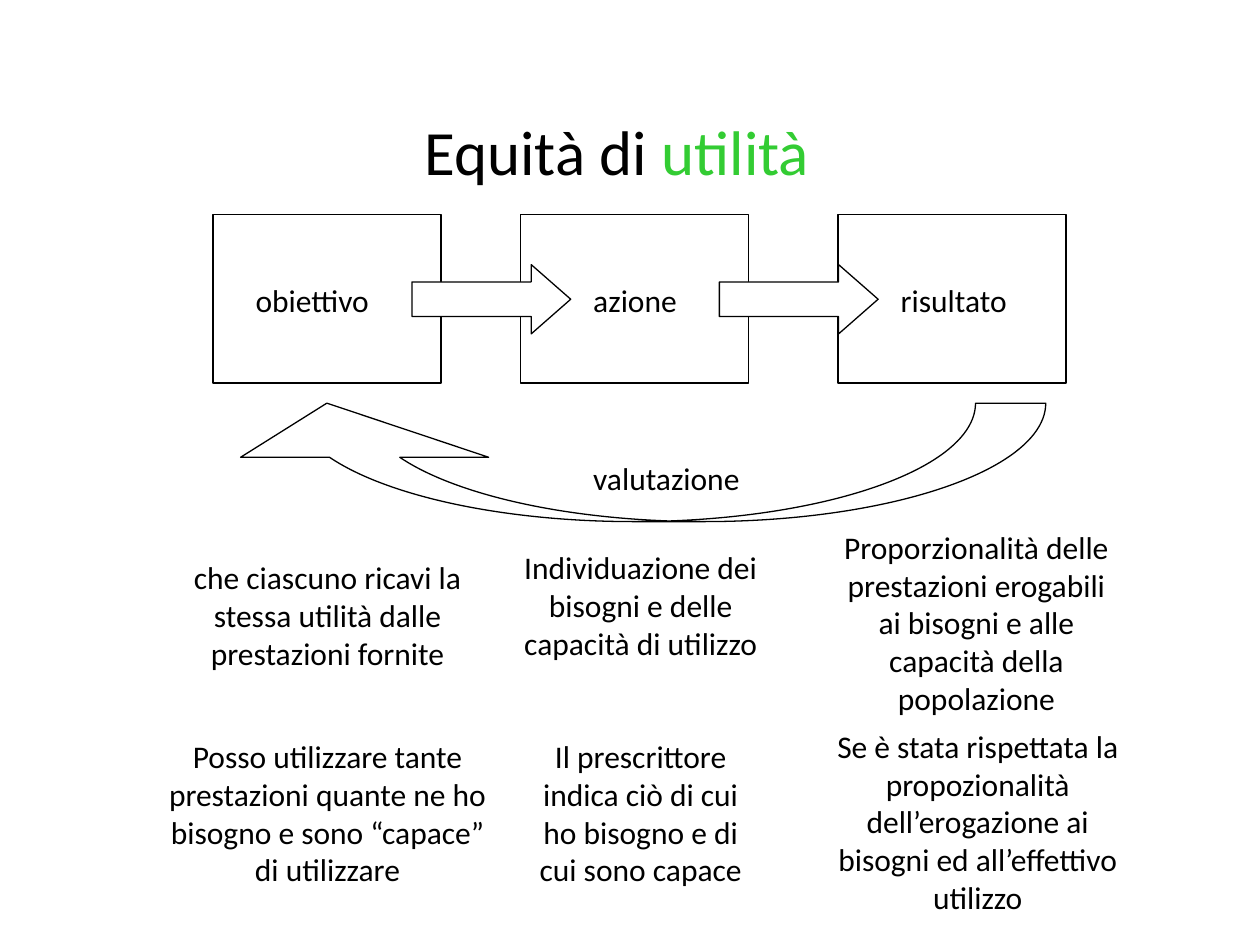
from pptx import Presentation
from pptx.dml.color import RGBColor
from pptx.enum.shapes import MSO_SHAPE as Shape
from pptx.enum.text import PP_ALIGN as Align
from pptx.oxml.ns import qn
from pptx.util import Inches, Pt

# Content: texts with left, top, width, height in inches
TITLE = [("Equità di ", "ink"), ("utilità", "accent")]
TITLE_AREA = (3.27, 0.84, 4.25, 0.7)
STEP_LEFTS = [1.69, 4.13, 6.65]
LABELS = [
    ("obiettivo", (1.93, 2.18, 1.26, 0.4)),
    ("azione", (4.61, 2.18, 1.02, 0.4)),
    ("risultato", (7.05, 2.18, 1.26, 0.4)),
    ("valutazione", (4.61, 3.59, 1.49, 0.4)),
]
NOTES = [
    ("che ciascuno ricavi la stessa utilità dalle prestazioni fornite",
     (1.38, 4.38, 2.44, 1.0)),
    ("Individuazione dei bisogni e delle capacità di utilizzo",
     (4.06, 4.3, 2.05, 1.3)),
    ("Proporzionalità delle prestazioni erogabili ai bisogni e alle capacità "
     "della popolazione", (6.57, 4.14, 2.36, 1.6)),
    ("Posso utilizzare tante prestazioni quante ne ho bisogno e sono “capace” "
     "di utilizzare", (1.22, 5.8, 2.76, 1.3)),
    ("Il prescrittore indica ciò di cui ho bisogno e di cui sono capace",
     (4.06, 5.8, 2.05, 1.3)),
    ("Se è stata rispettata la propozionalità dell’erogazione ai bisogni ed "
     "all’effettivo utilizzo", (6.5, 5.72, 2.52, 1.6)),
]

THEME = {
    "font": "Calibri", "title": Pt(36), "body": Pt(18), "line": Pt(0.75),
    "ink": RGBColor(0, 0, 0), "accent": RGBColor(0x33, 0xCC, 0x33),
    "paper": RGBColor(255, 255, 255),
}

# Geometry of the step row
STEP_TOP, STEP_WIDTH, STEP_HEIGHT = 1.7, 1.81, 1.34
ARROW_OFFSET, ARROW_TOP, ARROW_WIDTH, ARROW_HEIGHT = 1.58, 2.1, 1.26, 0.55
FEEDBACK_AREA = (1.61, 3.2, 6.69, 0.94)


def add_outline(page, kind, area, adjustments=(), filled=True):
    shape = page.shapes.add_shape(kind, *map(Inches, area))
    shape.shadow.inherit = False
    if filled:
        shape.fill.solid()
        shape.fill.fore_color.rgb = THEME["paper"]
    else:
        shape.fill.background()
    shape.line.color.rgb = THEME["ink"]
    shape.line.width = THEME["line"]
    for index, value in enumerate(adjustments):
        shape.adjustments[index] = value
    return shape


def add_text(page, pieces, area, size="body", align=Align.LEFT):
    box = page.shapes.add_textbox(*map(Inches, area))
    box.text_frame.word_wrap = True
    para = box.text_frame.paragraphs[0]
    para.alignment = align
    for text, color in pieces:
        span = para.add_run()
        span.text = text
        span.font.name = THEME["font"]
        span.font.size = THEME[size]
        span.font.color.rgb = THEME[color]


def main():
    deck = Presentation()
    deck.slide_width, deck.slide_height = Inches(10), Inches(7.5)
    page = deck.slides.add_slide(deck.slide_layouts[6])

    # Steps, then the arrows that overlap them
    for left in STEP_LEFTS:
        add_outline(page, Shape.RECTANGLE,
                    (left, STEP_TOP, STEP_WIDTH, STEP_HEIGHT))
    for left in STEP_LEFTS[:-1]:
        add_outline(page, Shape.RIGHT_ARROW,
                    (left + ARROW_OFFSET, ARROW_TOP, ARROW_WIDTH, ARROW_HEIGHT),
                    (0.5, 0.57))

    # Feedback arrow from result back to objective
    feedback = add_outline(page, Shape.CURVED_UP_ARROW, FEEDBACK_AREA,
                           (0.593, 2.094, 0.457), filled=False)
    feedback._element.spPr.find(qn("a:xfrm")).set("flipH", "1")

    # Title, labels and explanations
    add_text(page, TITLE, TITLE_AREA, "title")
    for text, area in LABELS:
        add_text(page, [(text, "ink")], area)
    for text, area in NOTES:
        add_text(page, [(text, "ink")], area, align=Align.CENTER)

    deck.save("out.pptx")


if __name__ == "__main__":
    main()
